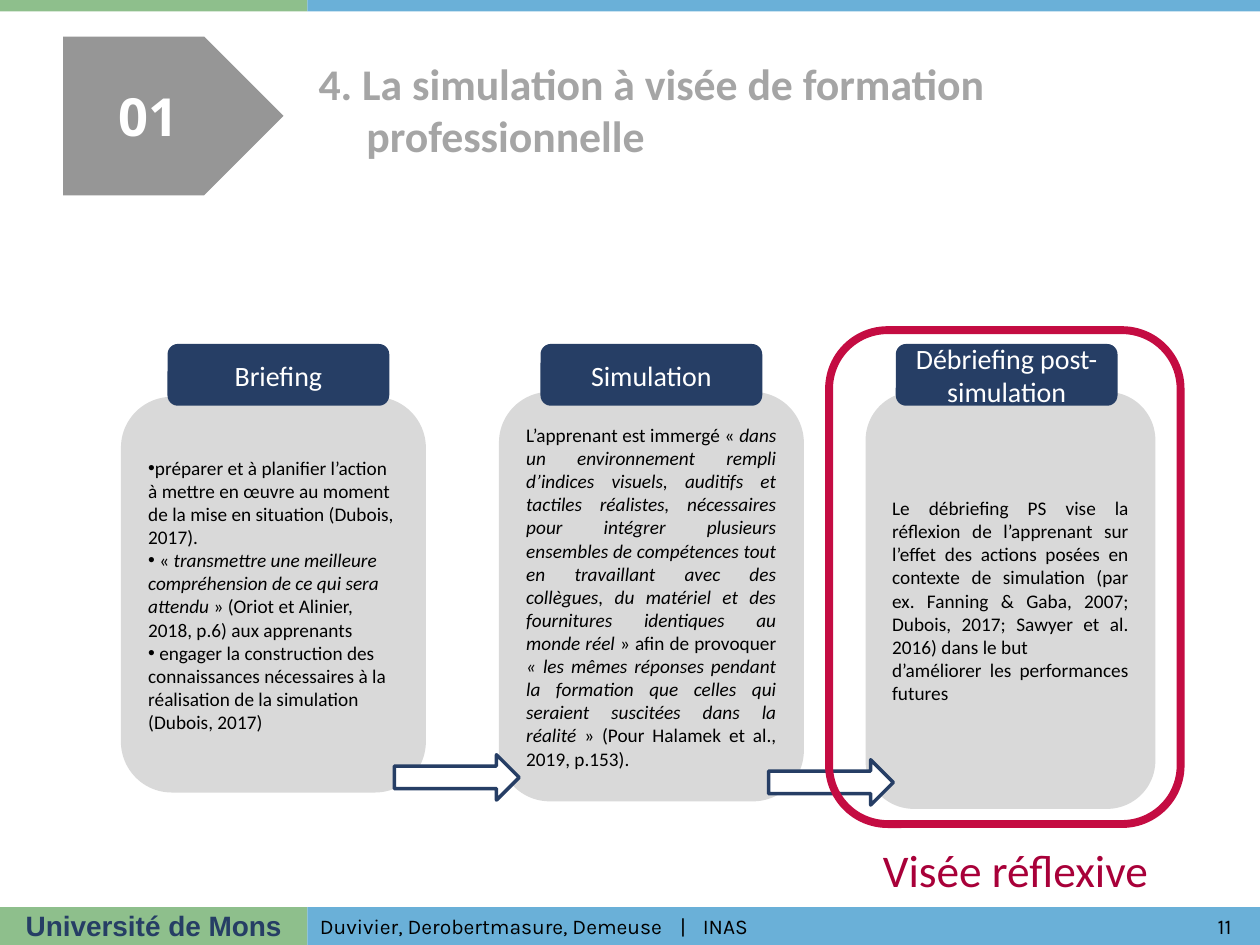
"""Build the slide on simulation for professional training."""
from dataclasses import dataclass

from lxml import etree
from pptx import Presentation
from pptx import util as u
from pptx.dml.color import RGBColor
from pptx.enum import shapes, text
from pptx.oxml import ns

SHAPE = shapes.MSO_SHAPE
ALIGN = text.PP_ALIGN
ANCHOR = text.MSO_ANCHOR


@dataclass(frozen=True)
class Theme:
    green: str = "8EBF8C"
    blue: str = "6AB0D8"
    navy: str = "263E65"
    panel: str = "D9D9D9"
    tag: str = "969696"
    title: str = "A5A5A5"
    frame: str = "C40C42"
    accent: str = "A80039"
    black: str = "000000"
    white: str = "FFFFFF"
    body_font: str = "Calibri"
    brand_font: str = "Arial"
    footer_font: str = "Karla"
    number_font: str = "Open Sans"
    body_size: float = 11
    footer_size: float = 12
    label_size: float = 16
    title_size: float = 25
    accent_size: float = 25.9
    number_size: float = 30


class SlideBuilder:
    def __init__(self, slide, theme):
        self.slide = slide
        self.theme = theme

    def shape(self, kind, area, fill=None, line=None, width=0):
        shape = self.slide.shapes.add_shape(kind, *map(u.Inches, area))
        shape.shadow.inherit = False
        if fill:
            shape.fill.solid()
            shape.fill.fore_color.rgb = RGBColor.from_string(fill)
        else:
            shape.fill.background()
        if line:
            shape.line.color.rgb = RGBColor.from_string(line)
            shape.line.width = u.Pt(width)
        else:
            shape.line.fill.background()
        return shape

    def set_text(self, box, lines, size, color, font=None, bold=False,
                 align=ALIGN.LEFT, anchor=ANCHOR.MIDDLE, bullet=False,
                 hanging=0, tabs=(), spacing=None):
        """Fill a box with paragraphs; asterisks enclose italic spans."""
        frame = box.text_frame
        frame.word_wrap = True
        frame.vertical_anchor = anchor
        for index, line in enumerate(lines):
            para = frame.add_paragraph() if index else frame.paragraphs[0]
            para.alignment = align
            if spacing:
                para.line_spacing = spacing
            properties = para._p.get_or_add_pPr()
            if hanging:
                properties.set("marL", str(u.Inches(hanging)))
                properties.set("indent", str(u.Inches(-hanging)))
            if bullet:
                etree.SubElement(properties, ns.qn("a:buFont"), typeface="Arial")
                etree.SubElement(properties, ns.qn("a:buChar"), char="•")
            if tabs:
                stops = etree.SubElement(properties, ns.qn("a:tabLst"))
                for stop in tabs:
                    etree.SubElement(stops, ns.qn("a:tab"),
                                     pos=str(u.Inches(stop)), algn="l")
            for part, words in enumerate(line.split("*")):
                if not words:
                    continue
                span = para.add_run()
                span.text = words
                span.font.name = font or self.theme.body_font
                span.font.size = u.Pt(size)
                span.font.bold = bold
                span.font.italic = part % 2 == 1
                span.font.color.rgb = RGBColor.from_string(color)

    def label(self, area, words, size, color, **style):
        box = self.slide.shapes.add_textbox(*map(u.Inches, area))
        self.set_text(box, [words], size, color, **style)

    def band(self, top, height):
        split = 2.44
        self.shape(SHAPE.RECTANGLE, (0, top, split, height), self.theme.green)
        self.shape(SHAPE.RECTANGLE, (split, top, 10 - split, height), self.theme.blue)

    def panel(self, area, lines, **style):
        box = self.shape(SHAPE.ROUNDED_RECTANGLE, area, self.theme.panel)
        self.set_text(box, lines, self.theme.body_size, self.theme.black, **style)

    def heading(self, left, words):
        box = self.shape(SHAPE.ROUNDED_RECTANGLE, (left, 2.73, 1.76, 0.49),
                         self.theme.navy)
        self.set_text(box, [words], self.theme.label_size, self.theme.white,
                      align=ALIGN.CENTER)

    def arrow(self, left, top):
        self.shape(SHAPE.RIGHT_ARROW, (left, top, 0.99, 0.36),
                   self.theme.white, self.theme.navy, 2)


BRIEFING = [
    "préparer et à planifier l’action à mettre en œuvre au moment de la mise "
    "en situation (Dubois, 2017).",
    " « *transmettre une meilleure compréhension de ce qui sera attendu* » "
    "(Oriot et Alinier, 2018, p.6) aux apprenants",
    " engager la construction des connaissances nécessaires à la réalisation "
    "de la simulation (Dubois, 2017)",
]
SIMULATION = [
    "L’apprenant est immergé « *dans un environnement rempli d’indices visuels, "
    "auditifs et tactiles réalistes, nécessaires pour intégrer plusieurs "
    "ensembles de compétences tout en travaillant avec des collègues, du "
    "matériel et des fournitures identiques au monde réel* » afin de provoquer"
    "* « les mêmes réponses pendant la formation que celles qui seraient "
    "suscitées dans la réalité* » (Pour Halamek et al., 2019, p.153).",
]
DEBRIEFING = [
    "Le débriefing PS vise la réflexion de l’apprenant sur l’effet des actions "
    "posées en contexte de simulation (par ex. Fanning & Gaba, 2007; Dubois, "
    "2017; Sawyer et al. 2016) dans le but",
    "d’améliorer les performances futures",
]


def main():
    deck = Presentation()
    deck.slide_width, deck.slide_height = u.Inches(10), u.Inches(7.5)
    theme = Theme()
    page = SlideBuilder(deck.slides.add_slide(deck.slide_layouts[6]), theme)

    page.band(0, 0.09)
    page.band(7.2, 0.3)
    page.label((0, 7.16, 2.44, 0.37), "Université de Mons", theme.label_size,
               theme.navy, font=theme.brand_font, bold=True,
               align=ALIGN.CENTER, anchor=ANCHOR.TOP)
    page.label((9.44, 7.2, 0.56, 0.3), "11", theme.footer_size, theme.black,
               font=theme.footer_font, align=ALIGN.CENTER)
    page.label((2.44, 7.2, 7, 0.3), "Duvivier, Derobertmasure, Demeuse\t|\tINAS",
               theme.footer_size, theme.black, font=theme.footer_font,
               tabs=(2.86, 3.04))

    page.panel((0.96, 3.15, 2.42, 3.14), BRIEFING, bullet=True)
    page.panel((3.96, 3.11, 2.42, 3.25), SIMULATION, align=ALIGN.JUSTIFY)
    page.panel((6.87, 3.11, 2.3, 3.31), DEBRIEFING, align=ALIGN.JUSTIFY)
    page.arrow(3.13, 5.99)
    page.arrow(6.1, 6.03)
    page.heading(1.33, "Briefing")
    page.heading(4.29, "Simulation")
    page.heading(7.11, "Débriefing post-simulation")

    page.shape(SHAPE.PENTAGON, (0.5, 0.29, 1.75, 1.26), theme.tag)
    page.shape(SHAPE.ROUNDED_RECTANGLE, (6.58, 2.62, 2.79, 3.92),
               line=theme.frame, width=4.5)
    page.label((6.38, 6.68, 3.36, 0.52), "Visée réflexive", theme.accent_size,
               theme.accent, align=ALIGN.CENTER, anchor=ANCHOR.TOP,
               hanging=0.38, spacing=0.9)
    page.label((0.58, 0.62, 1.19, 0.61), "01", theme.number_size, theme.white,
               font=theme.number_font, bold=True, align=ALIGN.CENTER,
               anchor=ANCHOR.TOP)
    page.label((2.43, 0.4, 6.61, 0.98),
               "4. La simulation à visée de formation professionnelle",
               theme.title_size, theme.title, bold=True, anchor=ANCHOR.TOP,
               hanging=0.38)
    deck.save("out.pptx")


if __name__ == "__main__":
    main()
